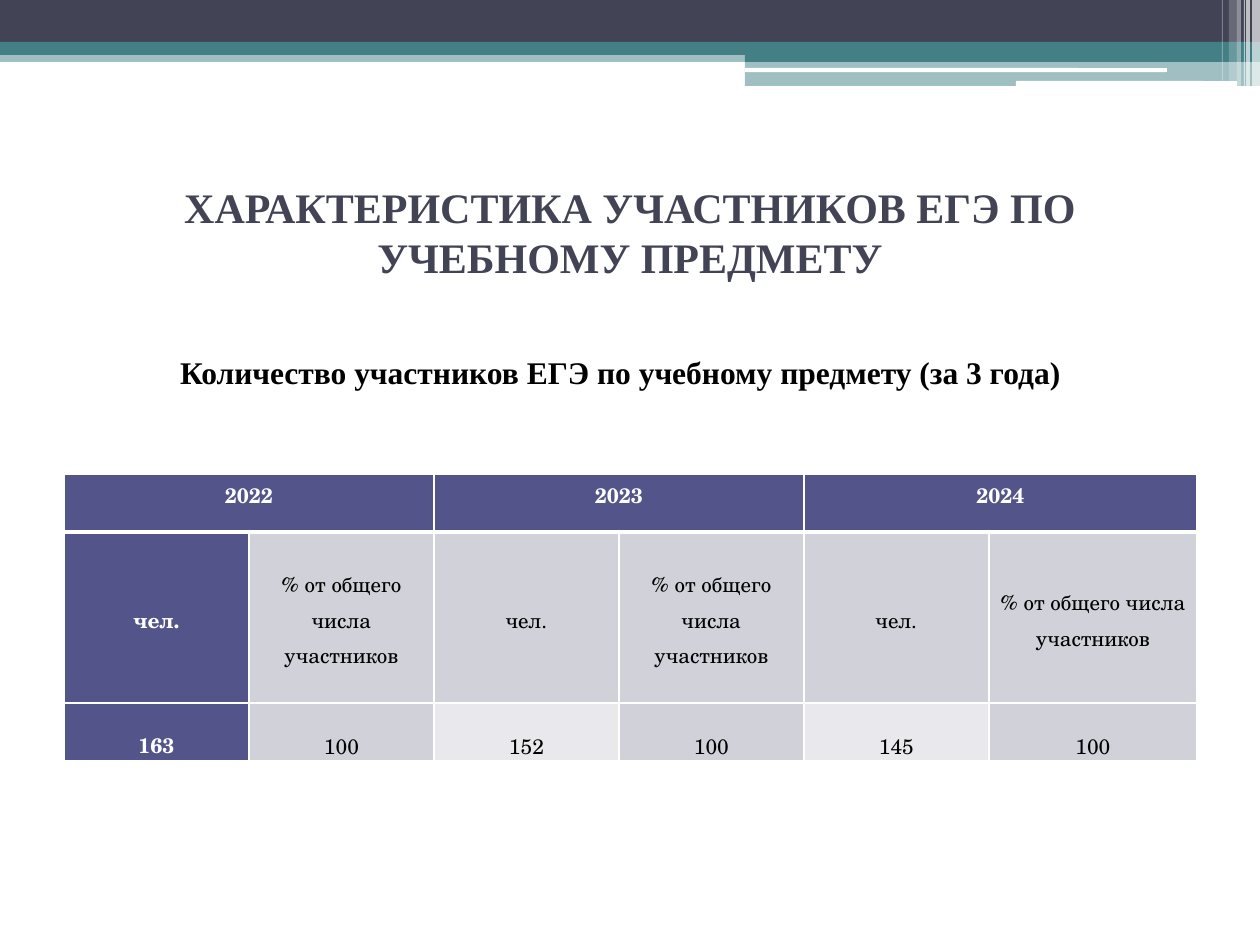
"""Build a slide on exam participant numbers over three years."""
import dataclasses
import typing

import lxml.etree
import pptx
import pptx.dml.color
import pptx.enum.shapes
import pptx.enum.text
import pptx.oxml.ns
import pptx.util

EMU_PER_PX = 914400 / 126
SHAPES = pptx.enum.shapes.MSO_SHAPE
ANCHORS = pptx.enum.text.MSO_ANCHOR


@dataclasses.dataclass(frozen=True)
class Theme:
    dark: str = "424456"
    teal: str = "438086"
    white: str = "FFFFFF"
    black: str = "000000"
    accent: str = "53548A"
    band: str = "D1D1DA"
    pale_band: str = "E9E9ED"
    heading_font: str = "Times New Roman"
    table_font: str = "TeX Gyre Schola"
    title_size: int = 24
    subtitle_size: int = 18
    table_size: int = 12
    rule_width: int = 1
    header_rule_width: int = 3


THEME = Theme()


class Box(typing.NamedTuple):
    left: int
    top: int
    width: int
    height: int


@dataclasses.dataclass(frozen=True)
class Bar:
    box: Box
    color: str
    opacity: int = 100
    rounded: bool = False


@dataclasses.dataclass(frozen=True)
class TextStyle:
    font: str
    size: int
    color: str
    bold: bool = True
    line_spacing: float = 1.0


@dataclasses.dataclass(frozen=True)
class TableRow:
    height: int
    texts: tuple[str, ...]
    anchor: ANCHORS
    fills: tuple[str, ...]


BARS = (
    Bar(Box(0, 50, 1260, 12), THEME.teal, 50),
    Bar(Box(0, 0, 1260, 42), THEME.dark),
    Bar(Box(0, 42, 1260, 13), THEME.teal),
    Bar(Box(745, 49, 515, 13), THEME.teal),
    Bar(Box(745, 62, 515, 24), THEME.teal, 50),
    Bar(Box(745, 68, 422, 4), THEME.white, rounded=True),
    Bar(Box(1016, 81, 221, 5), THEME.white, rounded=True),
    Bar(Box(1252, 0, 8, 86), THEME.white, 65),
    Bar(Box(1246, 0, 4, 86), THEME.white, 65),
    Bar(Box(1244, 0, 1, 86), THEME.white, 60),
    Bar(Box(1237, 0, 4, 86), THEME.white, 40),
    Bar(Box(1229, 0, 8, 81), THEME.white, 20),
    Bar(Box(1222, 0, 1, 81), THEME.white, 30),
)

TITLE = "ХАРАКТЕРИСТИКА УЧАСТНИКОВ ЕГЭ ПО УЧЕБНОМУ ПРЕДМЕТУ"
SUBTITLE = "Количество участников ЕГЭ по учебному предмету (за 3 года)"
COLUMN_WIDTHS = (185, 185, 185, 185, 185, 208)
TABLE_BOX = Box(64, 474, sum(COLUMN_WIDTHS), 287)
ROWS = (
    TableRow(58, ("2022", "", "2023", "", "2024", ""), ANCHORS.TOP, (THEME.accent,) * 6),
    TableRow(171, ("чел.", "% от общего числа участников") * 3, ANCHORS.MIDDLE,
             (THEME.accent,) + (THEME.band,) * 5),
    TableRow(58, ("163", "100", "152", "100", "145", "100"), ANCHORS.BOTTOM,
             (THEME.accent, THEME.band) + (THEME.pale_band, THEME.band) * 2),
)


def px(length: int) -> pptx.util.Emu:
    """Turn pixels into EMU."""
    return pptx.util.Emu(round(length * EMU_PER_PX))


def rgb(color: str) -> pptx.dml.color.RGBColor:
    """Turn a hex string into a colour."""
    return pptx.dml.color.RGBColor.from_string(color)


def draw_bar(slide, bar: Bar) -> None:
    """Draw one decorative bar."""
    preset = SHAPES.ROUNDED_RECTANGLE if bar.rounded else SHAPES.RECTANGLE
    strip = slide.shapes.add_shape(preset, *map(px, bar.box))
    strip.shadow.inherit = False
    strip.line.fill.background()
    strip.fill.solid()
    strip.fill.fore_color.rgb = rgb(bar.color)
    if bar.opacity < 100:
        color = strip.fill._xPr.find(".//" + pptx.oxml.ns.qn("a:srgbClr"))
        lxml.etree.SubElement(color, pptx.oxml.ns.qn("a:alpha"), val=str(bar.opacity * 1000))


def write(frame, text: str, style: TextStyle) -> None:
    """Write one centred paragraph."""
    paragraph = frame.paragraphs[0]
    paragraph.text = text
    paragraph.alignment = pptx.enum.text.PP_ALIGN.CENTER
    paragraph.line_spacing = style.line_spacing
    paragraph.font.name = style.font
    paragraph.font.size = pptx.util.Pt(style.size)
    paragraph.font.bold = style.bold
    paragraph.font.color.rgb = rgb(style.color)


def draw_heading(slide, box: Box, text: str, anchor: ANCHORS, style: TextStyle) -> None:
    """Draw a wrapped heading."""
    frame = slide.shapes.add_textbox(*map(px, box)).text_frame
    frame.word_wrap = True
    frame.vertical_anchor = anchor
    write(frame, text, style)


def set_borders(cell, row_index: int) -> None:
    """Give a cell white borders, thicker below the header row."""
    widths = dict.fromkeys(("lnL", "lnR", "lnT", "lnB"), THEME.rule_width)
    if row_index < 2:
        widths["lnT" if row_index else "lnB"] = THEME.header_rule_width
    properties = cell._tc.get_or_add_tcPr()
    for side, width in widths.items():
        line = lxml.etree.SubElement(properties, pptx.oxml.ns.qn(f"a:{side}"),
                                     w=str(pptx.util.Pt(width)))
        fill = lxml.etree.SubElement(line, pptx.oxml.ns.qn("a:solidFill"))
        lxml.etree.SubElement(fill, pptx.oxml.ns.qn("a:srgbClr"), val=THEME.white)


def draw_table(slide) -> None:
    """Draw the participants table."""
    table = slide.shapes.add_table(len(ROWS), len(COLUMN_WIDTHS), *map(px, TABLE_BOX)).table
    for column, width in zip(table.columns, COLUMN_WIDTHS):
        column.width = px(width)
    for row_index, row in enumerate(ROWS):
        table.rows[row_index].height = px(row.height)
        for column_index, (text, fill) in enumerate(zip(row.texts, row.fills)):
            cell = table.cell(row_index, column_index)
            set_borders(cell, row_index)
            cell.fill.solid()
            cell.fill.fore_color.rgb = rgb(fill)
            cell.margin_left = cell.margin_right = px(9)
            cell.margin_top = cell.margin_bottom = 0
            cell.vertical_anchor = row.anchor
            strong = fill == THEME.accent
            write(cell.text_frame, text,
                  TextStyle(THEME.table_font, THEME.table_size,
                            THEME.white if strong else THEME.black, strong, 1.15))
    for first in range(0, len(COLUMN_WIDTHS), 2):
        table.cell(0, first).merge(table.cell(0, first + 1))


def main() -> None:
    """Build and save the presentation."""
    deck = pptx.Presentation()
    deck.slide_width, deck.slide_height = px(1260), px(945)
    slide = deck.slides.add_slide(deck.slide_layouts[6])
    for bar in BARS:
        draw_bar(slide, bar)
    draw_heading(slide, Box(63, 158, 1134, 147), TITLE, ANCHORS.MIDDLE,
                 TextStyle(THEME.heading_font, THEME.title_size, THEME.dark))
    draw_table(slide)
    draw_heading(slide, Box(35, 347, 1171, 106), SUBTITLE, ANCHORS.TOP,
                 TextStyle(THEME.heading_font, THEME.subtitle_size, THEME.black))
    deck.save("out.pptx")


if __name__ == "__main__":
    main()
